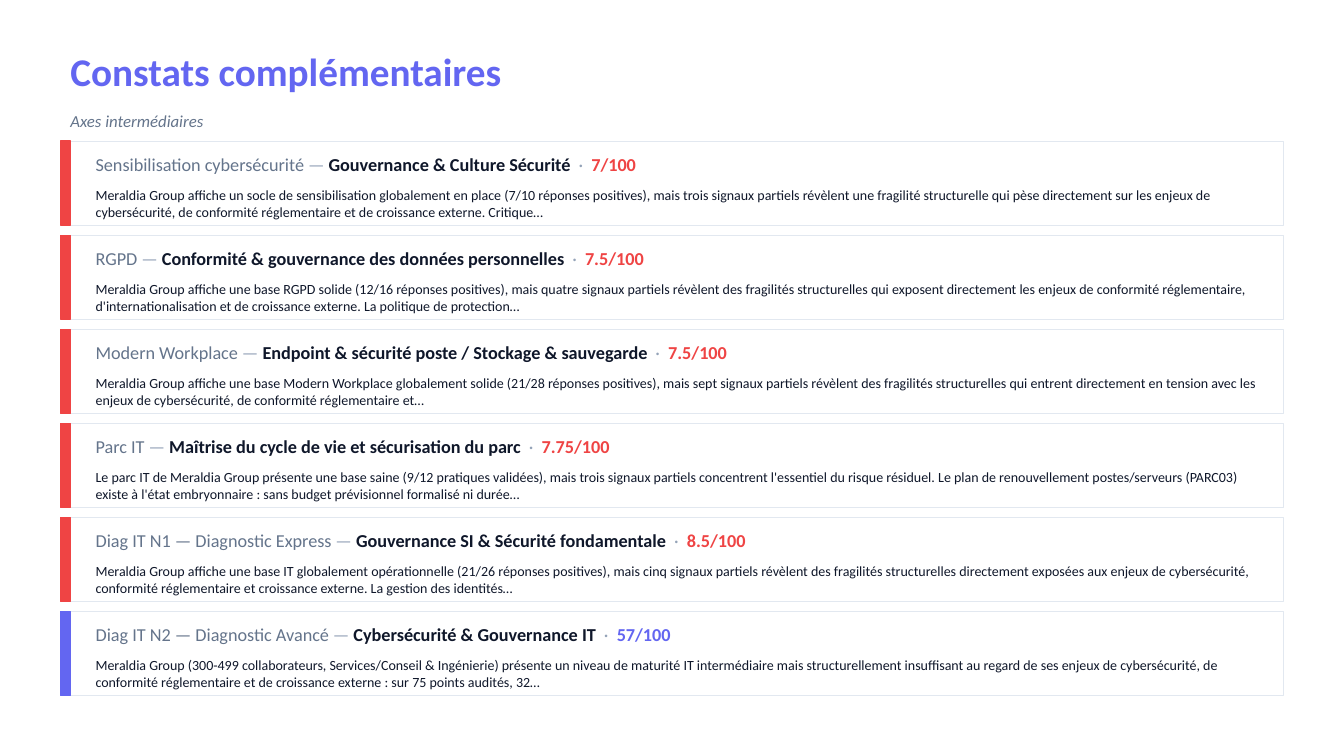
from pptx import Presentation
from pptx.dml.color import RGBColor
from pptx.enum.shapes import MSO_SHAPE
from pptx.enum.text import MSO_ANCHOR
from pptx.util import Pt

EMU_PER_PX = 9144
FONT = "Calibri"
COLORS = {
    "white": "FFFFFF",
    "border": "E2E8F0",
    "critical": "EF4444",
    "accent": "6366F1",
    "muted": "64748B",
    "separator": "94A3B8",
    "ink": "0F172A",
}
FINDINGS = [
    ("Sensibilisation cybersécurité", "Gouvernance & Culture Sécurité", "7/100", "critical",
     "Meraldia Group affiche un socle de sensibilisation globalement en place (7/10 réponses positives), "
     "mais trois signaux partiels révèlent une fragilité structurelle qui pèse directement sur les enjeux "
     "de cybersécurité, de conformité réglementaire et de croissance externe. Critique…"),
    ("RGPD", "Conformité & gouvernance des données personnelles", "7.5/100", "critical",
     "Meraldia Group affiche une base RGPD solide (12/16 réponses positives), mais quatre signaux partiels "
     "révèlent des fragilités structurelles qui exposent directement les enjeux de conformité réglementaire, "
     "d'internationalisation et de croissance externe. La politique de protection…"),
    ("Modern Workplace", "Endpoint & sécurité poste / Stockage & sauvegarde", "7.5/100", "critical",
     "Meraldia Group affiche une base Modern Workplace globalement solide (21/28 réponses positives), mais "
     "sept signaux partiels révèlent des fragilités structurelles qui entrent directement en tension avec "
     "les enjeux de cybersécurité, de conformité réglementaire et…"),
    ("Parc IT", "Maîtrise du cycle de vie et sécurisation du parc", "7.75/100", "critical",
     "Le parc IT de Meraldia Group présente une base saine (9/12 pratiques validées), mais trois signaux "
     "partiels concentrent l'essentiel du risque résiduel. Le plan de renouvellement postes/serveurs (PARC03) "
     "existe à l'état embryonnaire : sans budget prévisionnel formalisé ni durée…"),
    ("Diag IT N1 — Diagnostic Express", "Gouvernance SI & Sécurité fondamentale", "8.5/100", "critical",
     "Meraldia Group affiche une base IT globalement opérationnelle (21/26 réponses positives), mais cinq "
     "signaux partiels révèlent des fragilités structurelles directement exposées aux enjeux de cybersécurité, "
     "conformité réglementaire et croissance externe. La gestion des identités…"),
    ("Diag IT N2 — Diagnostic Avancé", "Cybersécurité & Gouvernance IT", "57/100", "accent",
     "Meraldia Group (300-499 collaborateurs, Services/Conseil & Ingénierie) présente un niveau de maturité IT "
     "intermédiaire mais structurellement insuffisant au regard de ses enjeux de cybersécurité, de conformité "
     "réglementaire et de croissance externe : sur 75 points audités, 32…"),
]


def px(length):
    return round(length * EMU_PER_PX)


def color(name):
    return RGBColor.from_string(COLORS[name])


def add_rect(slide, box, fill, line, line_width):
    rect = slide.shapes.add_shape(MSO_SHAPE.RECTANGLE, *map(px, box))
    rect.shadow.inherit = False
    rect.fill.solid()
    rect.fill.fore_color.rgb = color(fill)
    rect.line.color.rgb = color(line)
    rect.line.width = Pt(line_width)


def add_text(slide, box, runs, size, anchor=MSO_ANCHOR.MIDDLE, italic=False):
    frame = slide.shapes.add_textbox(*map(px, box)).text_frame
    frame.word_wrap = True
    frame.vertical_anchor = anchor
    paragraph = frame.paragraphs[0]
    paragraph.font.name = FONT
    paragraph.font.size = Pt(size)
    paragraph.font.italic = italic
    for words, tone, bold in runs:
        run = paragraph.add_run()
        run.text = words
        run.font.color.rgb = color(tone)
        run.font.bold = bold


def add_heading(slide, box):
    left, top, width, height = box
    title_height = height * 3 // 5
    add_text(slide, (left, top, width, title_height),
             [("Constats complémentaires", "accent", True)], 28)
    add_text(slide, (left, top + title_height, width, height - title_height),
             [("Axes intermédiaires", "muted", False)], 12, italic=True)


def add_finding(slide, box, finding):
    left, top, width, height = box
    axis, topic, score, level, summary = finding
    text_left, text_width = left + 25, width - 28
    add_rect(slide, box, "white", "border", 0.5)
    add_rect(slide, (left, top, 10, height), level, level, 1)
    add_text(slide, (text_left, top + 5, text_width, 35), [
        (axis, "muted", False),
        (" — ", "separator", False),
        (topic, "ink", True),
        ("  ·  ", "separator", False),
        (score, level, True),
    ], 13)
    add_text(slide, (text_left, top + 40, text_width, height - 40),
             [(summary, "ink", False)], 10, MSO_ANCHOR.TOP)


def add_findings(slide, box, gap=10):
    left, top, width, height = box
    pitch = (height + gap) / len(FINDINGS)
    for row, finding in enumerate(FINDINGS):
        add_finding(slide, (left, top + row * pitch, width, pitch - gap), finding)


def main():
    deck = Presentation()
    deck.slide_width, deck.slide_height = px(1333), px(750)
    slide = deck.slides.add_slide(deck.slide_layouts[6])
    add_heading(slide, (60, 40, 1200, 100))
    add_findings(slide, (60, 140, 1213, 550))
    deck.save("out.pptx")


if __name__ == "__main__":
    main()
